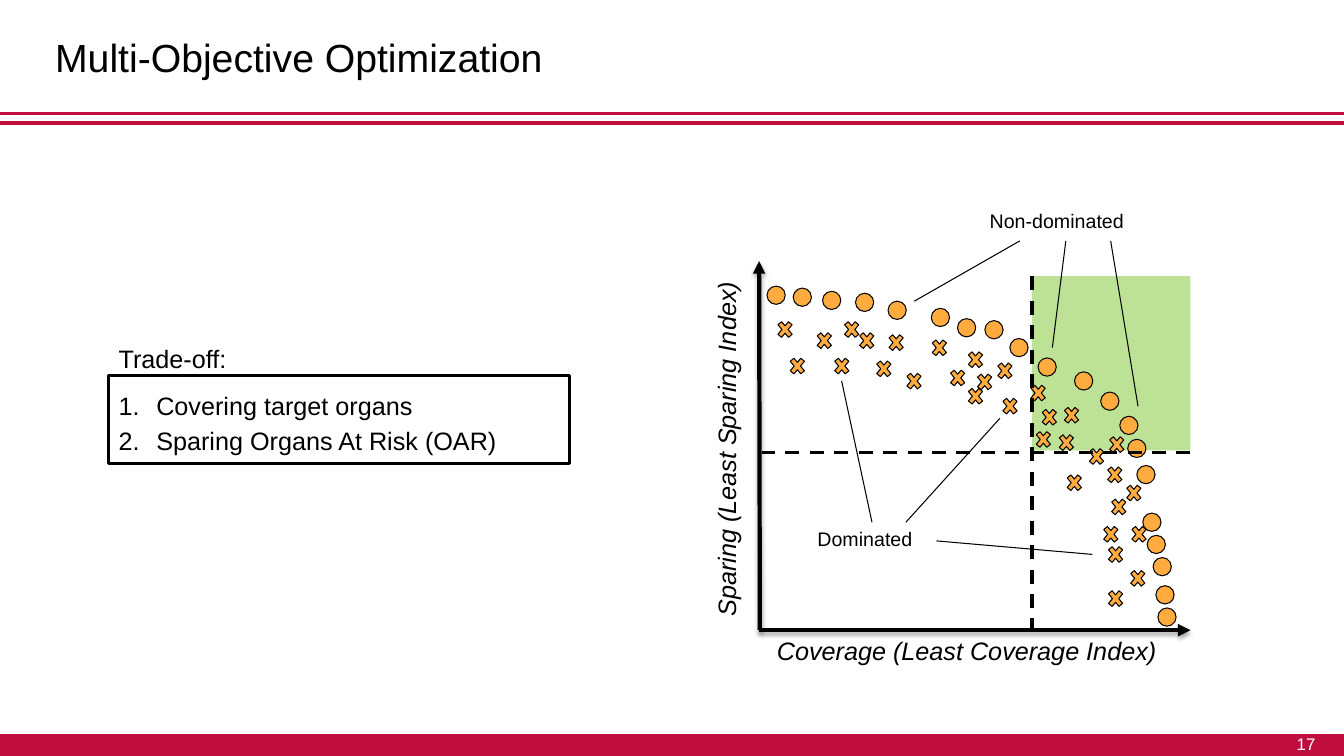
from lxml.etree import SubElement
from pptx import Presentation
from pptx.dml.color import RGBColor
from pptx.enum.dml import MSO_LINE
from pptx.enum.shapes import MSO_CONNECTOR, MSO_SHAPE
from pptx.enum.text import MSO_ANCHOR as ANCHOR, PP_ALIGN as ALIGN
from pptx.oxml.ns import qn
from pptx.util import Cm, Pt

COLORS = {"crimson": "BF0D3E", "black": "000000", "white": "FFFFFF",
          "green": "92D050", "orange": "FFAB40"}
RGB = {name: RGBColor.from_string(code) for name, code in COLORS.items()}

prs = Presentation()
prs.slide_width, prs.slide_height = Cm(33.87), Cm(19.05)
slide = prs.slides.add_slide(prs.slide_layouts[5])
shapes = slide.shapes


def write(holder, *lines, size=18, color="black", italic=False, align=ALIGN.LEFT,
          anchor=ANCHOR.TOP, wrap=True, inset=0.25, spacing=None, numbered=False):
    """Fill a shape with one formatted paragraph per line."""
    frame = holder.text_frame
    frame.word_wrap = wrap
    frame.vertical_anchor = anchor
    frame.margin_left = frame.margin_right = Cm(0.25)
    frame.margin_top = frame.margin_bottom = Cm(inset)
    for number, line in enumerate(lines):
        paragraph = frame.add_paragraph() if number else frame.paragraphs[0]
        paragraph.alignment = align
        if spacing:
            paragraph.line_spacing = spacing
        if numbered:
            properties = paragraph._p.get_or_add_pPr()
            properties.set("marL", str(Cm(0.95)))
            properties.set("indent", str(Cm(-0.95)))
            SubElement(properties, qn("a:buAutoNum"), type="arabicPeriod")
        paragraph.font.name = "Arial"
        paragraph.font.size = Pt(size)
        paragraph.font.italic = italic
        paragraph.font.color.rgb = RGB[color]
        paragraph.add_run().text = line


def draw_line(x1, y1, x2, y2, color="black", width=0.75, axis=False):
    """Draw a straight line; an axis gets an arrowhead and a soft shadow."""
    line = shapes.add_connector(MSO_CONNECTOR.STRAIGHT, Cm(x1), Cm(y1), Cm(x2), Cm(y2))
    line.line.color.rgb = RGB[color]
    line.line.width = Pt(width)
    effects = SubElement(line._element.spPr, qn("a:effectLst"))
    if axis:
        SubElement(line.line._get_or_add_ln(), qn("a:tailEnd"), type="triangle")
        shadow = SubElement(effects, qn("a:outerShdw"), blurRad=str(Pt(3.1)),
                            dist=str(Pt(1.8)), dir="5400000", rotWithShape="0")
        shade = SubElement(shadow, qn("a:srgbClr"), val=COLORS["black"])
        SubElement(shade, qn("a:alpha"), val="35000")
    return line


# Slide frame
footer = shapes.add_shape(MSO_SHAPE.RECTANGLE, 0, Cm(18.52), prs.slide_width, Cm(0.53))
footer.shadow.inherit = False
footer.fill.solid()
footer.fill.fore_color.rgb = footer.line.color.rgb = RGB["crimson"]
footer.line.width = Pt(0.75)
for rule_y in (2.87, 3.1):
    draw_line(0, rule_y, 33.87, rule_y, color="crimson", width=2.25)

title = shapes.title
title.left, title.top, title.width, title.height = Cm(1.14), Cm(0.58), Cm(31.55), Cm(2.11)
write(title, "Multi-Objective Optimization", size=28)
page_number = shapes.add_textbox(Cm(31.37), Cm(18.03), Cm(2.03), Cm(1.45))
write(page_number, "17", size=12, color="white", align=ALIGN.RIGHT, anchor=ANCHOR.MIDDLE)

# Region where both objectives are met
target_region = shapes.add_shape(MSO_SHAPE.RECTANGLE, Cm(26.01), Cm(6.96), Cm(3.99), Cm(4.39))
target_region.shadow.inherit = False
target_region.line.fill.background()
target_region.fill.solid()
target_region.fill.fore_color.rgb = RGB["green"]
green = target_region._element.spPr.find(qn("a:solidFill")).find(qn("a:srgbClr"))
SubElement(green, qn("a:alpha"), val="60000")

# Axes
draw_line(19.13, 15.88, 30, 15.88, width=3, axis=True)
draw_line(19.15, 15.88, 19.13, 6.58, width=3, axis=True)
coverage = shapes.add_textbox(Cm(19.33), Cm(15.88), Cm(10.16), Cm(1.02))
write(coverage, "Coverage (Least Coverage Index)", italic=True, wrap=False, inset=0.13)
sparing = shapes.add_textbox(Cm(13.79), Cm(10.77), Cm(9.02), Cm(1.02))
sparing.rotation = 270
write(sparing, "Sparing (Least Sparing Index)", italic=True, wrap=False, inset=0.13)

# Solutions, as left and top of each mark
front = [
    (19.33, 7.21), (19.99, 7.26), (20.73, 7.34), (21.56, 7.39), (22.38, 7.59),
    (23.47, 7.77), (24.13, 8.03), (24.82, 8.08), (25.45, 8.53), (26.16, 9.02),
    (27.08, 9.37), (27.74, 9.88), (28.22, 10.49), (28.42, 11.07), (28.65, 11.73),
    (28.8, 12.93), (28.91, 13.49), (29.06, 14.05), (29.13, 14.76), (29.18, 15.32),
]
behind_front = [
    (19.53, 8), (19.84, 8.92), (20.52, 8.28), (20.96, 8.92), (21.21, 8),
    (21.59, 8.28), (22.02, 8.99), (22.33, 8.33), (22.78, 9.3), (23.42, 8.46),
    (23.88, 9.22), (24.33, 8.76), (24.33, 9.68), (24.56, 9.32), (25.07, 9.04),
    (25.2, 9.93), (25.91, 9.6), (26.04, 10.77), (26.19, 10.21), (26.62, 10.85),
    (26.75, 10.16), (26.82, 11.86), (27.38, 11.2), (27.74, 13.16), (27.84, 11.66),
    (27.86, 13.67), (27.86, 14.78), (27.89, 10.9), (27.94, 12.47), (28.32, 12.12),
    (28.42, 14.27), (28.45, 13.16),
]
for preset, width, height, solutions in (
    (MSO_SHAPE.OVAL, 0.46, 0.46, front),
    (MSO_SHAPE.MATH_MULTIPLY, 0.51, 0.61, behind_front),
):
    for x, y in solutions:
        solution = shapes.add_shape(preset, Cm(x), Cm(y), Cm(width), Cm(height))
        solution.shadow.inherit = False
        solution.fill.solid()
        solution.fill.fore_color.rgb = RGB["orange"]
        solution.line.color.rgb = RGB["black"]
        solution.line.width = Pt(0.75)

# Thresholds
for ends in ((26.01, 6.96, 26.01, 15.88), (30, 11.4, 19.2, 11.4)):
    draw_line(*ends, width=2.5).line.dash_style = MSO_LINE.DASH

# Labels with pointers; a side number joins the pointer to its label
for name, x, y, width, pointers in (
    ("Dominated", 20.35, 13.16, 3.25, [
        (21.21, 9.6, 21.97, 13.16, 0),
        (25.2, 10.54, 22.83, 13.16, None),
        (27.53, 13.97, 23.6, 13.63, 3)]),
    ("Non-dominated", 24.69, 5.13, 4.34, [
        (23.04, 7.59, 25.7, 6.07, None),
        (26.52, 8.76, 26.86, 6.07, 2),
        (28.68, 10.24, 27.99, 6.07, None)]),
):
    label = shapes.add_textbox(Cm(x), Cm(y), Cm(width), Cm(0.94))
    write(label, name, size=14, wrap=False, inset=0.13)
    for *ends, side in pointers:
        pointer = draw_line(*ends)
        if side is not None:
            pointer.end_connect(label, side)

# Objectives
objectives = shapes.add_shape(MSO_SHAPE.RECTANGLE, Cm(2.74), Cm(9.47), Cm(11.61), Cm(2.21))
objectives.shadow.inherit = False
objectives.fill.background()
objectives.line.color.rgb = RGB["black"]
objectives.line.width = Pt(2.25)
write(objectives, "Covering target organs", "Sparing Organs At Risk (OAR)",
      spacing=1.15, numbered=True)
trade_off = shapes.add_textbox(Cm(2.74), Cm(8.28), Cm(10.21), Cm(1.19))
write(trade_off, "Trade-off:", spacing=1.15)

prs.save("out.pptx")
